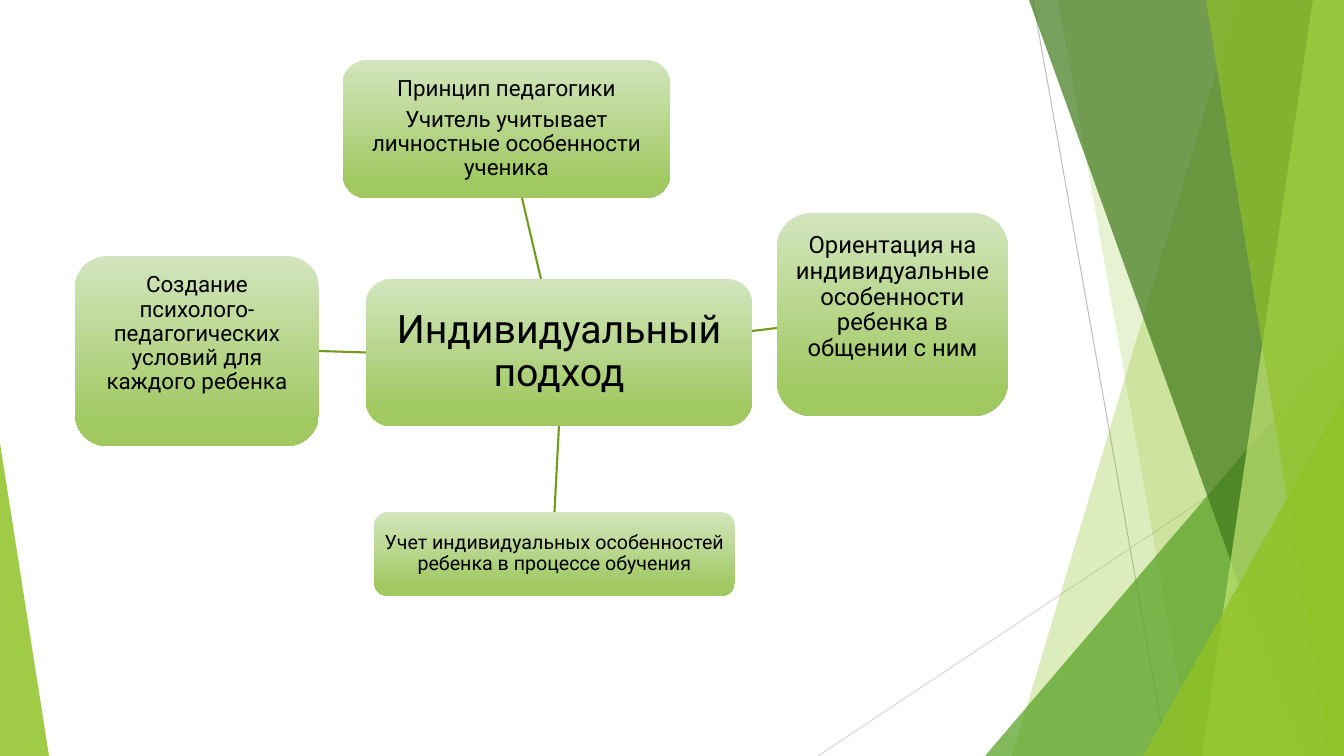
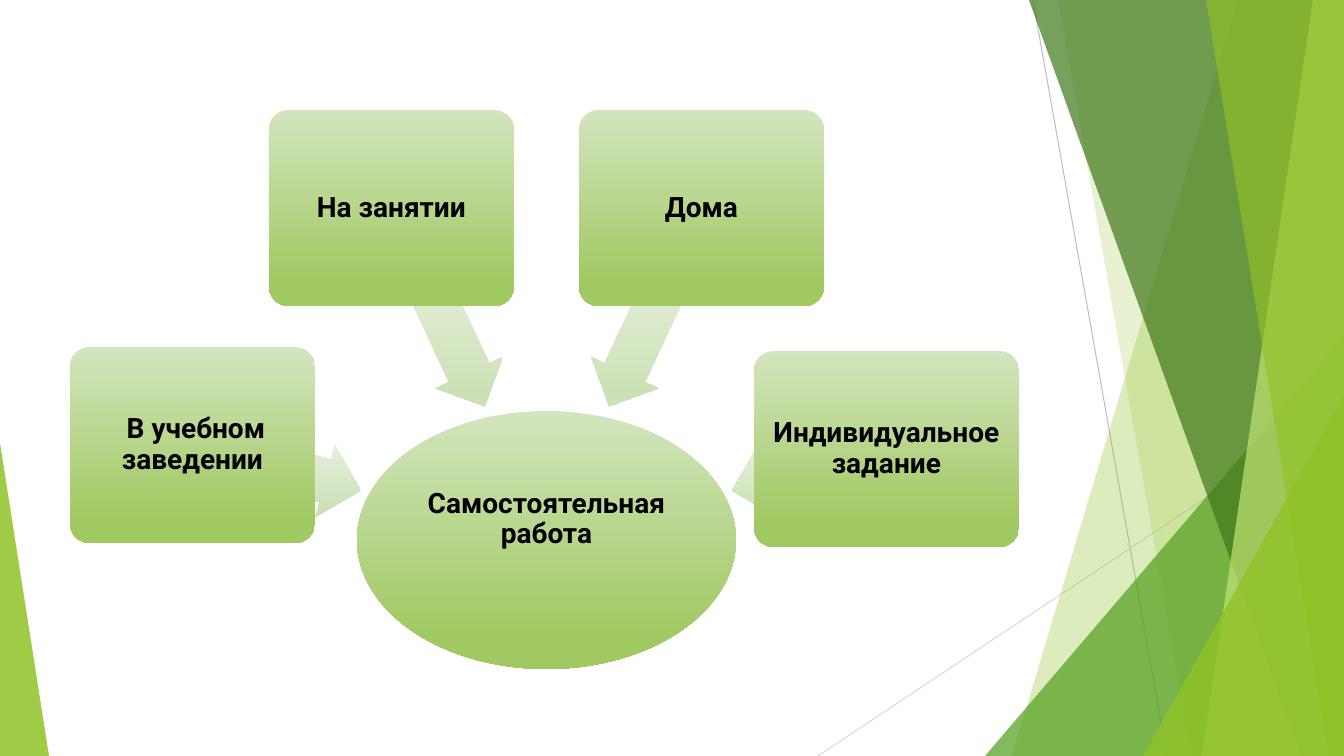
import pptx
import pptx.util
import pptx.dml.color
import pptx.enum.shapes
import pptx.enum.text
import pptx.oxml.ns
from lxml import etree

SCALE = 12192000 / 1344
FONT = "Roboto"
COLORS = {
    "text": "000000", "link": "739B1E",
    "box_top": "D3E5BE", "box_bottom": "A0C962",
    "arrow_top": "F2F7ED", "arrow_bottom": "CDE1B7",
    "lime": "90C226", "green": "54A021", "dark": "3F7819", "pale": "C0E474",
    "ray": "BFBFBF", "light_ray": "D9D9D9",
}
RGB = {name: pptx.dml.color.RGBColor.from_string(c) for name, c in COLORS.items()}
MSO = pptx.enum.shapes.MSO_SHAPE
STRAIGHT = pptx.enum.shapes.MSO_CONNECTOR.STRAIGHT
qn = pptx.oxml.ns.qn


def px(*values):
    return [pptx.util.Emu(round(v * SCALE)) for v in values]


def add_text(sp, text, size=16, bold=False, inset=4, lift=0):
    tf = sp.text_frame
    tf.word_wrap = True
    tf.vertical_anchor = pptx.enum.text.MSO_ANCHOR.MIDDLE
    tf.margin_left, tf.margin_top, tf.margin_right, tf.margin_bottom = px(
        inset, inset, inset, inset + lift)
    for i, line in enumerate(text.split("\n")):
        p = tf.add_paragraph() if i else tf.paragraphs[0]
        p.alignment = pptx.enum.text.PP_ALIGN.CENTER
        p.line_spacing = 0.9
        p.space_after = pptx.util.Pt(5)
        r = p.add_run()
        r.text = line
        r.font.name = FONT
        r.font.size = pptx.util.Pt(size)
        r.font.bold = bold
        r.font.color.rgb = RGB["text"]


prs = pptx.Presentation()
prs.slide_width, prs.slide_height = px(1344, 756)
layout = prs.slide_layouts[6]
for ph in list(layout.placeholders):
    layout.shapes.element.remove(ph.element)
approach = prs.slides.add_slide(layout)
homework = prs.slides.add_slide(layout)
lines = []

for color, ends in [("ray", (1033, 0, 1167, 756)), ("light_ray", (1344, 406, 818, 756))]:
    ray = approach.shapes.add_connector(STRAIGHT, *px(*ends))
    ray.line.color.rgb = RGB[color]
    ray.line.width = pptx.util.Pt(0.75)
    lines.append(ray)

# BANDS
bands = [
    ("lime", 30, (1238, 1012)),
    ("lime", 20, (1058, 1192)),
    ("green", 72, (985, 336, 359, 420)),
    ("dark", 70, (1029, 1301)),
    ("pale", 70, (1313, 1202)),
    ("lime", 65, (1206, 1329)),
    ("lime", 80, (1143, 396, 201, 360)),
    ("lime", 85, (0, 443, 49, 313)),
]
for color, opacity, place in bands:
    if len(place) == 2:
        top, bottom = place
        builder = approach.shapes.build_freeform(top, 0, scale=SCALE)
        builder.add_line_segments([(1344, 0), (1344, 756), (bottom, 756)], close=True)
        sp = builder.convert_to_shape()
    else:
        sp = approach.shapes.add_shape(MSO.ISOSCELES_TRIANGLE, *px(*place))
        sp.adjustments[0] = 1 if place[0] else 0
    sp.shadow.inherit = False
    sp.line.fill.background()
    sp.fill.solid()
    sp.fill.fore_color.rgb = RGB[color]
    clr = sp.element.spPr.find(".//" + qn("a:srgbClr"))
    etree.SubElement(clr, qn("a:alpha"), val=str(opacity * 1000))

for sp in list(approach.shapes):
    layout.shapes.element.append(sp.element)

bold = {"size": 20, "bold": True}
diagrams = [
    (approach, [
        ("box", (366, 279, 386, 147), "Индивидуальный подход", {"size": 28, "inset": 8}),
        ("box", (343, 60, 327, 138),
         "Принцип педагогики\nУчитель учитывает личностные особенности ученика", {}),
        ("box", (777, 213, 231, 203),
         "Ориентация на индивидуальные особенности ребенка в общении с ним",
         {"size": 17, "inset": 5, "lift": 34}),
        ("box", (374, 512, 361, 84),
         "Учет индивидуальных особенностей ребенка в процессе обучения", {"size": 14}),
        ("box", (75, 256, 244, 190),
         "Создание психолого-педагогических условий для каждого ребенка", {"lift": 34}),
    ]),
    (homework, [
        ("ellipse", (357, 411, 379, 258), "Самостоятельная работа",
         {**bold, "inset": 1, "lift": 41}),
        ("arrow", (190, 431, 174, 74), 195, {}),
        ("card", (70, 347, 245, 196), " В учебном заведении", bold),
        ("arrow", (329, 270, 219, 74), 245, {}),
        ("card", (269, 110, 245, 196), "На занятии", bold),
        ("arrow", (546, 270, 219, 74), 295, {}),
        ("card", (579, 110, 245, 196), "Дома", bold),
        ("arrow", (729, 433, 160, 74), 345, {}),
        ("card", (754, 351, 265, 196), "Индивидуальное задание", bold),
    ]),
]
kinds = {
    "box": (MSO.ROUNDED_RECTANGLE, [0.17], "box"),
    "card": (MSO.ROUNDED_RECTANGLE, [0.1], "box"),
    "ellipse": (MSO.OVAL, [], "box"),
    "arrow": (MSO.LEFT_ARROW, [0.6, 0.5], "arrow"),
}
for s, items in diagrams:
    for kind, place, content, style in items:
        preset, adjustments, tone = kinds[kind]
        sp = s.shapes.add_shape(preset, *px(*place))
        for i, value in enumerate(adjustments):
            sp.adjustments[i] = value
        sp.shadow.inherit = False
        sp.line.fill.background()
        sp.fill.gradient()
        sp.fill.gradient_angle = 270
        sp.element.spPr.find(qn("a:gradFill")).set("rotWithShape", "0")
        for stop, position, end in zip(sp.fill.gradient_stops, (0, 0.88), ("top", "bottom")):
            stop.color.rgb = RGB[f"{tone}_{end}"]
            stop.position = position
        if kind == "arrow":
            sp.rotation = content
        else:
            add_text(sp, content, **style)

center, principle, orientation, learning, conditions = approach.shapes
links = [
    ((541, 279, 522, 198), None),
    ((752, 331, 777, 328), None),
    ((559, 426, 555, 512), (2, learning, 0)),
    ((366, 352, 319, 351), (1, conditions, 3)),
]
for ends, joint in links:
    link = approach.shapes.add_connector(STRAIGHT, *px(*ends))
    link.line.color.rgb = RGB["link"]
    link.line.width = pptx.util.Pt(1.5)
    if joint:
        start, target, finish = joint
        link.begin_connect(center, start)
        link.end_connect(target, finish)
    lines.append(link)

for line in lines:
    etree.SubElement(line.element.spPr, qn("a:effectLst"))

prs.save("out.pptx")
